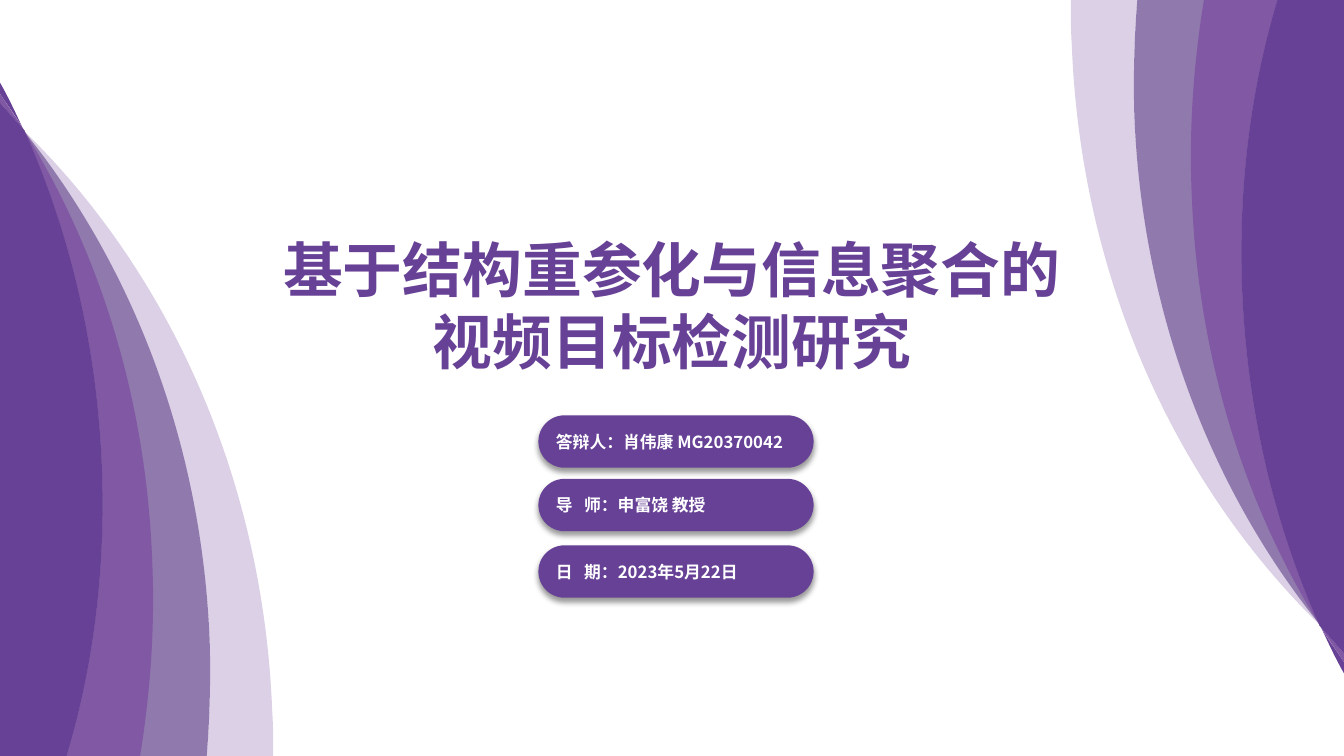
from dataclasses import dataclass

from lxml.etree import SubElement
from pptx import Presentation
from pptx.dml.color import RGBColor
from pptx.enum.shapes import MSO_SHAPE
from pptx.enum.text import MSO_ANCHOR, PP_ALIGN
from pptx.oxml.ns import qn
from pptx.util import Inches, Pt


@dataclass(frozen=True)
class Theme:
    font: str = "Noto Sans CJK SC"
    deep: str = "674196"
    violet: str = "8058A3"
    muted: str = "9079AD"
    pale: str = "DBD0E6"
    glint: str = "DDE3E5"
    mist: str = "D0D6D8"
    white: str = "FFFFFF"
    title_size: float = 42.7
    title_pitch: float = 51.2
    label_size: float = 12


THEME = Theme()
WIDTH, HEIGHT = 13.33, 7.5

BANDS = [
    (THEME.pale, [
        (0, 1.08), (0, 7.5), (2.71, 7.5),
        (2.71, 7.35, 2.71, 7.2, 2.7, 7.05),
        (2.61, 4.74, 1.67, 2.7, 0.25, 1.31),
        (0.26, 1.33),
        (1.32, 2.66, 2, 4.42, 2.08, 6.37),
        (2.09, 6.75, 2.08, 7.13, 2.05, 7.5),
        (0, 7.5),
    ]),
    (THEME.muted, [
        (2.05, 7.5),
        (2.08, 7.13, 2.09, 6.75, 2.08, 6.37),
        (2, 4.26, 1.21, 2.38, 0, 1.02),
        (0, 7.5),
    ]),
    (THEME.glint, [(0.22, 1.26), (0.23, 1.29), (0.24, 1.3), (0.25, 1.31)]),
    (THEME.mist, [(0.24, 1.3), (0.26, 1.33), (0.25, 1.31)]),
    (THEME.violet, [
        (0, 1.02), (0, 7.5), (1.39, 7.5),
        (1.49, 6.88, 1.54, 6.23, 1.51, 5.56),
        (1.45, 3.98, 1, 2.53, 0.26, 1.33),
        (0.24, 1.3), (0.24, 1.29),
        (0.69, 2.29, 0.96, 3.42, 1.01, 4.62),
        (1.05, 5.63, 0.93, 6.6, 0.66, 7.5),
        (0, 7.5),
    ]),
    (THEME.deep, [
        (0, 0.82), (0, 0.93),
        (0.07, 1.04, 0.15, 1.14, 0.22, 1.26),
        (0.15, 1.11, 0.08, 0.96, 0, 0.82),
    ]),
    (THEME.violet, [
        (0, 0.93), (0, 1.02),
        (0.08, 1.11, 0.16, 1.2, 0.24, 1.3),
        (0.22, 1.26),
        (0.15, 1.15, 0.07, 1.04, 0, 0.93),
    ]),
    (THEME.deep, [
        (0, 1.02), (0, 7.5), (0.66, 7.5),
        (0.93, 6.6, 1.05, 5.63, 1.01, 4.62),
        (0.96, 3.42, 0.69, 2.29, 0.24, 1.29),
        (0.16, 1.2, 0.08, 1.11, 0, 1.02),
    ]),
]

TITLE = ["基于结构重参化与信息聚合的", "视频目标检测研究"]
LABELS = [
    (4.12, "答辩人：肖伟康 MG20370042"),
    (4.75, "导\t师：申富饶 教授"),
    (5.41, "日\t期：2023年5月22日"),
]


def apply_format(target, values):
    for name, value in values.items():
        setattr(target, name, value)


def paint(shape, color):
    shape.fill.solid()
    shape.fill.fore_color.rgb = RGBColor.from_string(color)
    shape.line.fill.background()
    shape.shadow.inherit = False


def bend_segments(shape, outline):
    segments = shape._element.findall(".//" + qn("a:lnTo"))
    for step in outline[1:]:
        used, segments = segments[:len(step) // 2], segments[len(step) // 2:]
        if len(used) == 3:
            used[0].tag = qn("a:cubicBezTo")
            for extra in used[1:]:
                used[0].append(extra[0])
                extra.getparent().remove(extra)


def add_band(group, color, outline):
    vertices = [(Inches(step[i]), Inches(step[i + 1]))
                for step in outline for i in range(0, len(step), 2)]
    builder = group.shapes.build_freeform(*vertices[0])
    builder.add_line_segments(vertices[1:], close=True)
    band = builder.convert_to_shape()
    bend_segments(band, outline)
    paint(band, color)


def add_fan(page, turned):
    group = page.shapes.add_group_shape()
    for color, outline in BANDS:
        add_band(group, color, outline)
    if turned:
        apply_format(group, {
            "left": Inches(WIDTH) - group.left - group.width,
            "top": Inches(HEIGHT) - group.top - group.height,
            "rotation": 180,
        })


def add_span(para, text, size, color):
    span = para.add_run()
    span.text = text
    span.font.color.rgb = RGBColor.from_string(color)
    apply_format(span.font, {"size": Pt(size), "bold": True, "name": THEME.font})
    SubElement(span._r.get_or_add_rPr(), qn("a:ea"), typeface=THEME.font)


def add_title(page):
    box = page.shapes.add_textbox(Inches(2.68), Inches(2.26), Inches(7.97), Inches(1.54))
    frame = box.text_frame
    frame.word_wrap = False
    for index, line in enumerate(TITLE):
        para = frame.add_paragraph() if index else frame.paragraphs[0]
        apply_format(para, {"alignment": PP_ALIGN.CENTER, "line_spacing": Pt(THEME.title_pitch)})
        add_span(para, line, THEME.title_size, THEME.deep)


def add_shadow(shape):
    effects = shape._element.spPr.find(qn("a:effectLst"))
    shadow = SubElement(effects, qn("a:outerShdw"), blurRad=str(Pt(4)), dist=str(Pt(3)),
                        dir="5400000", algn="t", rotWithShape="0")
    color = SubElement(shadow, qn("a:srgbClr"), val="000000")
    SubElement(color, qn("a:alpha"), val="40000")


def add_label(page, top, text):
    pill = page.shapes.add_shape(MSO_SHAPE.ROUNDED_RECTANGLE, Inches(5.34), Inches(top),
                                 Inches(2.73), Inches(0.52))
    pill.adjustments[0] = 0.5
    paint(pill, THEME.deep)
    add_shadow(pill)
    apply_format(pill.text_frame, {"word_wrap": True, "vertical_anchor": MSO_ANCHOR.MIDDLE})
    para = pill.text_frame.paragraphs[0]
    para.alignment = PP_ALIGN.LEFT
    if "\t" in text:
        tabs = SubElement(para._p.get_or_add_pPr(), qn("a:tabLst"))
        SubElement(tabs, qn("a:tab"), pos=str(Inches(0.28)), algn="l")
    add_span(para, text, THEME.label_size, THEME.white)


def main():
    deck = Presentation()
    apply_format(deck, {"slide_width": Inches(WIDTH), "slide_height": Inches(HEIGHT)})
    page = deck.slides.add_slide(deck.slide_layouts[6])
    for turned in (False, True):
        add_fan(page, turned)
    add_title(page)
    for top, text in LABELS:
        add_label(page, top, text)
    deck.save("out.pptx")


if __name__ == "__main__":
    main()
